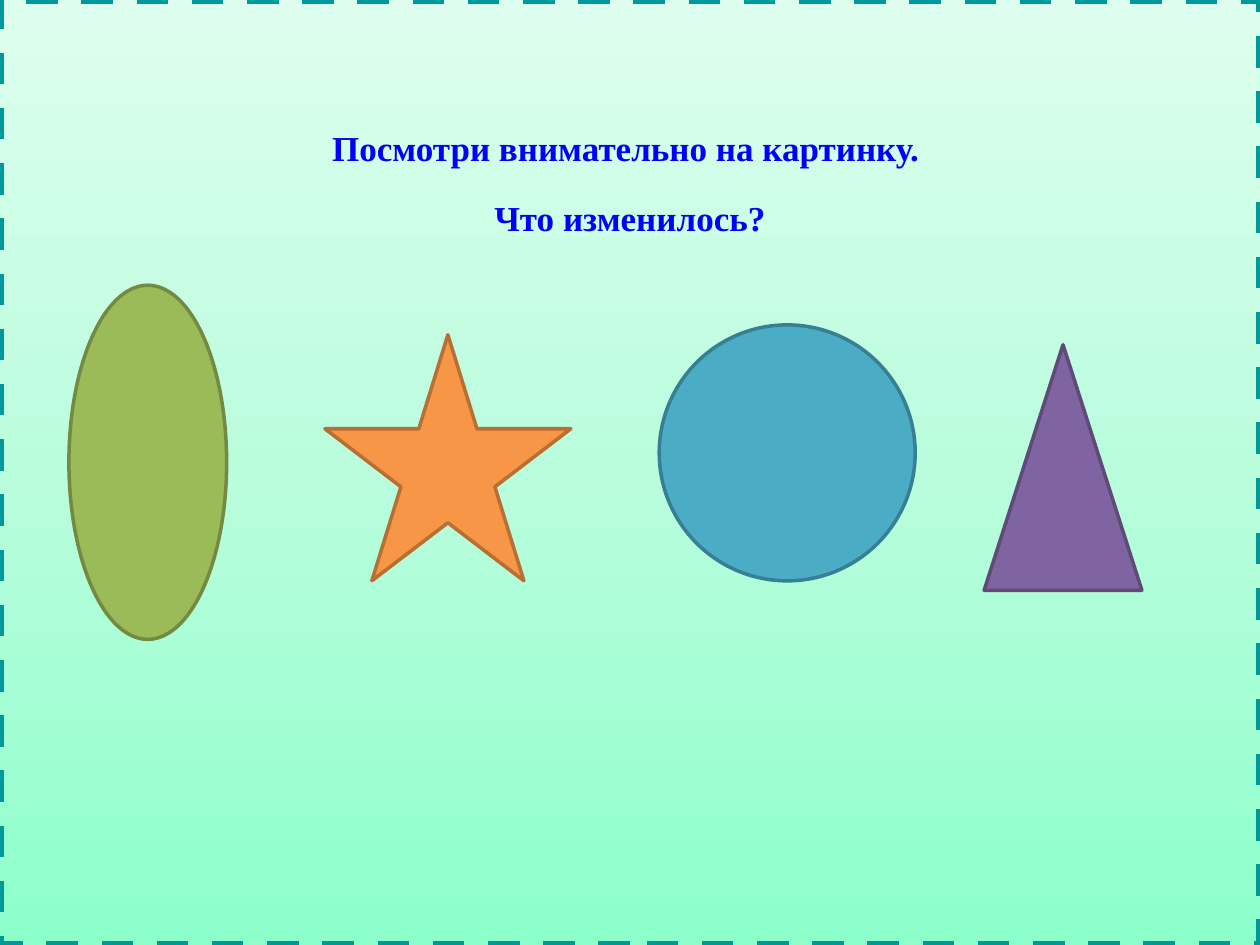
from copy import deepcopy
from dataclasses import dataclass

from pptx import Presentation
from pptx.dml.color import RGBColor
from pptx.dml.fill import FillFormat
from pptx.enum.dml import MSO_LINE
from pptx.enum.shapes import MSO_SHAPE
from pptx.enum.text import MSO_ANCHOR, PP_ALIGN
from pptx.util import Cm, Pt

WIDTH, HEIGHT = 25.4, 19.05


@dataclass
class Figure:
    kind: MSO_SHAPE
    left: float
    top: float
    width: float
    height: float
    fill: str
    outline: str


FIGURES = [
    Figure(MSO_SHAPE.OVAL, 1.39, 5.75, 3.18, 7.14, "9BBB59", "738A42"),
    Figure(MSO_SHAPE.STAR_5_POINT, 6.55, 6.75, 4.96, 4.96, "F79646", "B76F34"),
    Figure(MSO_SHAPE.OVAL, 13.29, 6.55, 5.16, 5.16, "4BACC6", "377F92"),
    Figure(MSO_SHAPE.ISOSCELES_TRIANGLE, 19.84, 6.95, 3.18, 4.95, "8064A2", "5F4A78"),
]
QUESTION = ["Посмотри внимательно на картинку. ", "Что изменилось?"]


def color(hex_code: str) -> RGBColor:
    return RGBColor.from_string(hex_code)


def set_gradient(fill: FillFormat, hex_codes: list[str], angle: float) -> None:
    """Spread three colours evenly; the angle runs counter-clockwise."""
    fill.gradient()
    fill.gradient_angle = angle
    stop_list = fill._fill._gradFill.gsLst
    stop_list.append(deepcopy(stop_list[-1]))
    for index, (stop, hex_code) in enumerate(zip(fill.gradient_stops, hex_codes)):
        stop.position = index / 2
        stop.color.rgb = color(hex_code)


def add_outlined(slide, figure: Figure, line_width: float):
    shape = slide.shapes.add_shape(
        figure.kind, Cm(figure.left), Cm(figure.top), Cm(figure.width), Cm(figure.height)
    )
    shape.shadow.inherit = False
    shape.fill.solid()
    shape.fill.fore_color.rgb = color(figure.fill)
    shape.line.color.rgb = color(figure.outline)
    shape.line.width = Pt(line_width)
    return shape


def write_question(frame) -> None:
    frame.word_wrap = True
    frame.vertical_anchor = MSO_ANCHOR.TOP
    frame.margin_top = Cm(2.12)
    frame.text = "\n".join(QUESTION)
    for index, paragraph in enumerate(frame.paragraphs):
        paragraph.alignment = PP_ALIGN.CENTER
        paragraph.line_spacing = 1.5
        paragraph.space_before = Pt(4 if index else 0)
        for run in paragraph.runs:
            run.font.name = "Times New Roman"
            run.font.size = Pt(20)
            run.font.bold = True
            run.font.color.rgb = color("0000FF")


def main() -> None:
    presentation = Presentation()
    presentation.slide_width, presentation.slide_height = Cm(WIDTH), Cm(HEIGHT)
    slide = presentation.slides.add_slide(presentation.slide_layouts[6])
    set_gradient(slide.background.fill, ["00B0F0", "CDD4E3", "00B050"], 270)

    # Dashed panel with the question
    panel = add_outlined(
        slide, Figure(MSO_SHAPE.RECTANGLE, 0, 0, WIDTH, HEIGHT, "BAFDDD", "009999"), 4.5
    )
    set_gradient(panel.fill, ["8CFFCB", "BAFDDD", "DDFEEE"], 90)
    panel.line.dash_style = MSO_LINE.DASH
    write_question(panel.text_frame)

    # Figures to remember
    for figure in FIGURES:
        add_outlined(slide, figure, 2)

    presentation.save("out.pptx")


if __name__ == "__main__":
    main()
